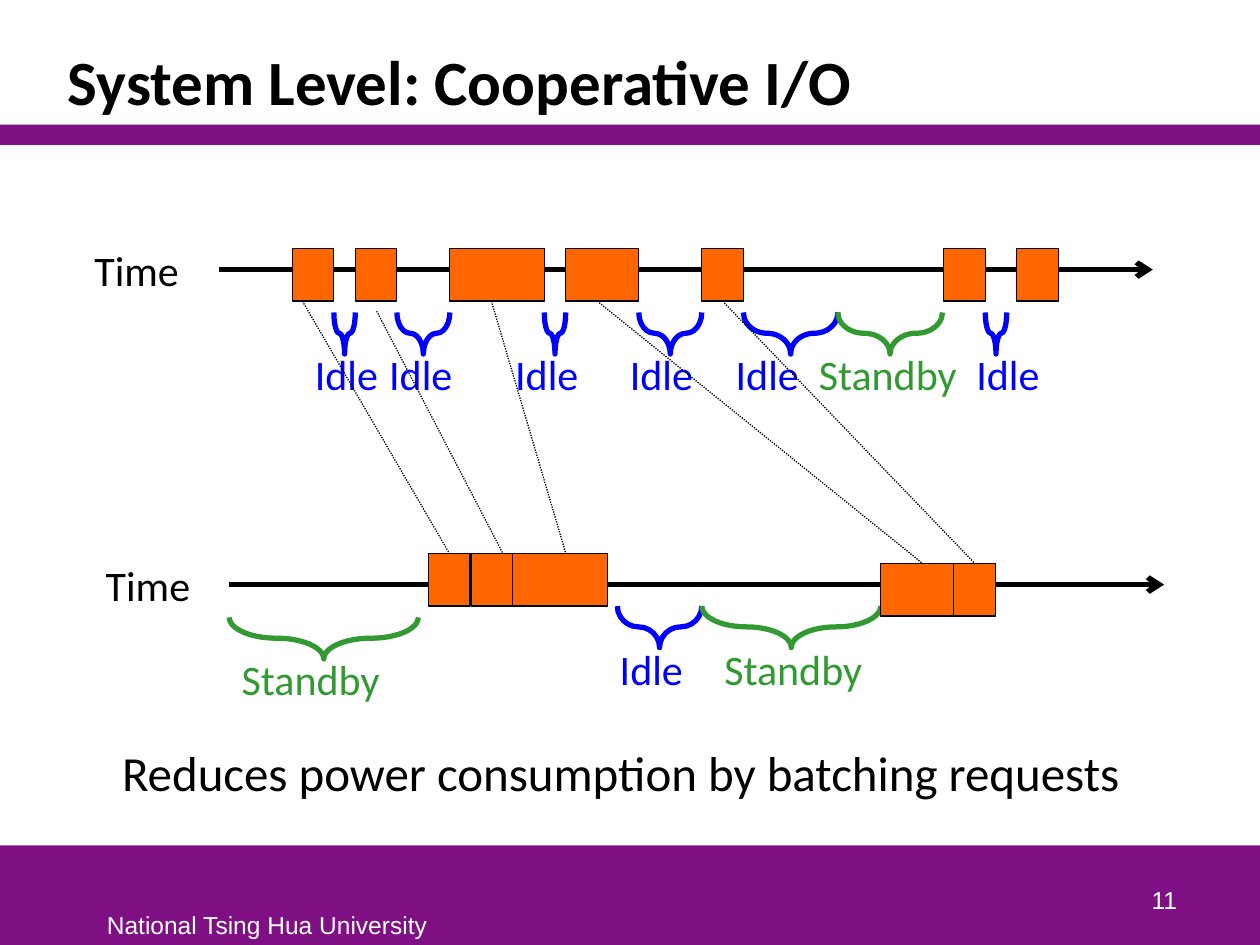
from lxml.etree import SubElement
from pptx import Presentation
from pptx.dml.color import RGBColor
from pptx.enum.dml import MSO_LINE
from pptx.enum.shapes import MSO_CONNECTOR, MSO_SHAPE
from pptx.enum.text import MSO_ANCHOR, PP_ALIGN
from pptx.oxml.ns import qn
from pptx.util import Inches, Pt

PURPLE, ORANGE, BLUE, GREEN = "7F1084", "FF6600", "0000FF", "339933"
BLACK, WHITE = "000000", "FFFFFF"
BOX_H, BRACE_H = 0.42, 0.33
TOP, BOTTOM = 0, 2


def rgb(value):
    return RGBColor.from_string(value)


class Canvas:
    font = "Calibri"

    def __init__(self, slide):
        self.s = slide

    def rect(self, x, y, w, h, fill, line=None):
        sp = self.s.shapes.add_shape(
            MSO_SHAPE.RECTANGLE, Inches(x), Inches(y), Inches(w), Inches(h))
        sp.shadow.inherit = False
        sp.fill.solid()
        sp.fill.fore_color.rgb = rgb(fill)
        if line:
            sp.line.color.rgb = rgb(line)
            sp.line.width = Pt(0.75)
        else:
            sp.line.fill.background()
        return sp

    def requests(self, y, boxes):
        return [self.rect(x, y, w, BOX_H, ORANGE, BLACK) for x, w in boxes]

    def text(self, x, y, w, h, text, size=24, color=BLACK, wrap=True,
             anchor=MSO_ANCHOR.TOP, para=None, **font):
        sp = self.s.shapes.add_textbox(Inches(x), Inches(y), Inches(w), Inches(h))
        tf = sp.text_frame
        tf.word_wrap, tf.vertical_anchor = wrap, anchor
        p = tf.paragraphs[0]
        for name, value in (para or {}).items():
            setattr(p, name, value)
        r = p.add_run()
        r.text = text
        for name, value in {"name": self.font, "size": Pt(size), **font}.items():
            setattr(r.font, name, value)
        r.font.color.rgb = rgb(color)

    def line(self, start, end, width, dash=None, arrow=False):
        cn = self.s.shapes.add_connector(
            MSO_CONNECTOR.STRAIGHT, *map(Inches, start + end))
        cn.line.color.rgb = rgb(BLACK)
        cn.line.width = Pt(width)
        if dash:
            cn.line.dash_style = dash
        if arrow:
            SubElement(cn.line._get_or_add_ln(), qn("a:tailEnd"), type="arrow")
        SubElement(cn._element.spPr, qn("a:effectLst"))
        return cn

    def brace(self, x, y, span, color):
        """Downward brace from x to x + span, with its upper edge at y."""
        left = x + (span - BRACE_H) / 2
        top = y + (BRACE_H - span) / 2
        sp = self.s.shapes.add_shape(
            MSO_SHAPE.LEFT_BRACE, Inches(left), Inches(top),
            Inches(BRACE_H), Inches(span))
        sp.rotation = 270
        sp.adjustments[0] = span / 4 / min(span, BRACE_H)
        sp.shadow.inherit = False
        sp.fill.background()
        sp.line.color.rgb = rgb(color)
        sp.line.width = Pt(3)

    def period(self, x, y, span, label_x, label_y, standby=False):
        color = GREEN if standby else BLUE
        self.brace(x, y, span, color)
        self.text(label_x, label_y, 1.33 if standby else 0.75, 0.5,
                  "Standby" if standby else "Idle", color=color)


def main():
    prs = Presentation()
    prs.slide_width, prs.slide_height = Inches(10), Inches(7.5)
    c = Canvas(prs.slides.add_slide(prs.slide_layouts[6]))

    # Bands, footer and title
    c.rect(0, 6.71, 10, 0.79, PURPLE)
    c.rect(0, 0.99, 10, 0.16, PURPLE)
    c.text(0.75, 7.17, 2.76, 0.33, "National Tsing Hua University", 14, WHITE,
           wrap=False, name="Arial")
    c.text(0.44, 0.25, 8.97, 0.74, "System Level: Cooperative I/O", 36,
           anchor=MSO_ANCHOR.BOTTOM, para={"line_spacing": 0.85}, bold=True)

    # Upper timeline: scattered requests
    c.line((1.74, 2.14), (9.15, 2.14), 3, arrow=True)
    c.text(0.65, 1.89, 1.08, 0.5, "Time")
    upper = c.requests(1.97, [(2.32, 0.33), (2.82, 0.33), (3.57, 0.75),
                              (4.49, 0.58), (5.57, 0.33), (7.49, 0.33),
                              (8.07, 0.33)])
    for x, span, label_x, standby in [
            (2.65, 0.17, 2.4, False), (3.15, 0.42, 2.99, False),
            (4.32, 0.17, 3.99, False), (5.07, 0.5, 4.9, False),
            (5.9, 0.75, 5.74, False), (6.65, 0.83, 6.4, True),
            (7.82, 0.17, 7.65, False)]:
        c.period(x, 2.48, span, label_x, 2.72, standby)

    # Lower timeline: batched requests
    for x, y, span, label_x, label_y, standby in [
            (1.82, 4.9, 1.5, 1.82, 5.14, True),
            (4.9, 4.81, 0.67, 4.82, 5.06, False),
            (5.57, 4.81, 1.42, 5.65, 5.06, True)]:
        c.period(x, y, span, label_x, label_y, standby)
    c.line((1.82, 4.64), (9.24, 4.64), 3, arrow=True)
    c.text(0.74, 4.39, 1.08, 0.5, "Time")
    first = c.requests(4.39, [(3.4, 0.33), (3.74, 0.33), (4.07, 0.75)])
    second = c.requests(4.47, [(6.99, 0.58), (7.57, 0.33)])

    # Dotted links from each request to its batch
    links = [c.line(start, end, 0.75, MSO_LINE.ROUND_DOT) for start, end in [
        ((2.4, 2.39), (3.57, 4.39)), ((2.99, 2.47), (3.99, 4.39)),
        ((3.9, 2.39), (4.49, 4.39)), ((4.74, 2.39), (7.32, 4.47)),
        ((5.74, 2.39), (7.74, 4.47))]]
    links[0].end_connect(first[0], TOP)
    links[-1].begin_connect(upper[4], BOTTOM)
    links[-1].end_connect(second[1], TOP)

    # Conclusion and page number
    c.text(0.87, 5.84, 8.22, 0.57,
           "Reduces power consumption by batching requests", 28, wrap=False)
    c.text(7.36, 6.81, 2.08, 0.5, "11", 14, WHITE, anchor=MSO_ANCHOR.BOTTOM,
           para={"alignment": PP_ALIGN.RIGHT}, name="Arial")

    prs.save("out.pptx")


if __name__ == "__main__":
    main()
